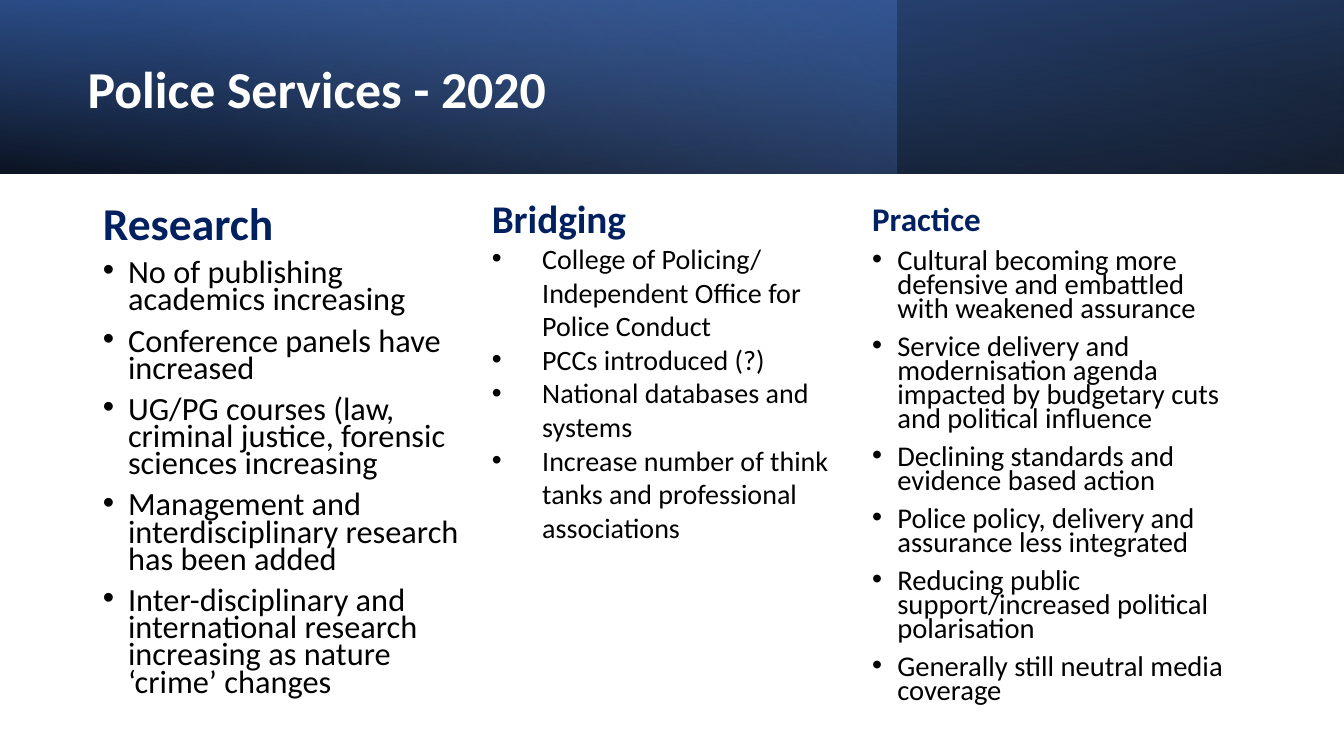
from lxml import etree
from pptx import Presentation
from pptx import util as u
from pptx.dml.color import RGBColor
from pptx.enum import shapes, text
from pptx.oxml import ns

WHITE, BLACK, NAVY = "FFFFFF", "000000", "002060"
FONT = "Calibri"
TITLE = "Police Services - 2020"

# width, rotation, mirrored, gradient angle, stops (percent, colour, opacity)
BANNER = [
    (13.33, 180, True, 100, [(0, BLACK, 96), (100, "2F5597", 100)]),
    (8.89, 0, False, 140, [(0, "4472C4", 41), (74, "8FAADC", 0)]),
    (13.33, 0, True, 260, [(0, BLACK, 63), (78, "4472C4", 15)]),
]
BAND = 1.72

RESEARCH = ("Research", [
    "No of publishing academics increasing",
    "Conference panels have increased",
    "UG/PG courses (law, criminal justice, forensic sciences increasing",
    "Management and interdisciplinary research has been added",
    "Inter-disciplinary and international research increasing as nature ‘crime’ changes",
])
BRIDGING = ("Bridging", [
    "College of Policing/ Independent Office for Police Conduct",
    "PCCs introduced (?)",
    "National databases and systems",
    "Increase number of think tanks and professional associations",
])
PRACTICE = ("Practice", [
    "Cultural becoming more defensive and embattled with weakened assurance",
    "Service delivery and modernisation agenda impacted by budgetary cuts and political influence",
    "Declining standards and evidence based action",
    "Police policy, delivery and assurance less integrated",
    "Reducing public support/increased political polarisation",
    "Generally still neutral media coverage",
])


def rgb(code):
    return RGBColor.from_string(code)


def place(shape, *box):
    shape.left, shape.top, shape.width, shape.height = map(u.Inches, box)


def add(parent, tag, **attrs):
    node = etree.SubElement(parent, ns.qn(tag))
    for key, val in attrs.items():
        node.set(key, str(val))
    return node


def shade(shape, angle, stops):
    """Fill with a linear gradient whose stops have their own opacity."""
    shape.fill.background()
    props = shape.element.spPr
    blank = props.find(ns.qn("a:noFill"))
    grad = add(props, "a:gradFill", rotWithShape=1)
    props.replace(blank, grad)
    steps = add(grad, "a:gsLst")
    for pos, code, alpha in stops:
        stop = add(steps, "a:gs", pos=pos * 1000)
        color = add(stop, "a:srgbClr", val=code)
        add(color, "a:alpha", val=alpha * 1000)
    add(grad, "a:lin", ang=angle * 60000, scaled=0)


def style(para, size, code, bold):
    font = para.font
    font.name, font.size, font.bold = FONT, u.Pt(size), bold
    font.color.rgb = rgb(code)
    para.alignment = text.PP_ALIGN.LEFT


def write(shape, column, sizes, indent, line, before):
    """Write a heading and its bulleted points."""
    head, points = column
    frame = shape.text_frame
    frame.word_wrap = True
    frame.auto_size = text.MSO_AUTO_SIZE.NONE
    for i, words in enumerate([head, *points]):
        para = frame.add_paragraph() if i else frame.paragraphs[0]
        para.text = words
        para.line_spacing, para.space_before = line, u.Pt(before)
        style(para, sizes[i > 0], BLACK if i else NAVY, i == 0)
        hang = u.Inches(indent) if i else 0
        props = para._p.get_or_add_pPr()
        props.set("marL", str(hang))
        props.set("indent", str(-hang))
        if i:
            add(props, "a:buFont", typeface="Arial")
            add(props, "a:buChar", char="•")
        else:
            add(props, "a:buNone")


def main():
    deck = Presentation()
    deck.slide_width, deck.slide_height = u.Inches(13.33), u.Inches(7.5)
    slide = deck.slides.add_slide(deck.slide_layouts[3])
    title, left, right = slide.placeholders

    for i, (width, turn, mirror, angle, stops) in enumerate(BANNER):
        band = slide.shapes.add_shape(shapes.MSO_SHAPE.RECTANGLE, 0, 0,
                                      u.Inches(width), u.Inches(BAND))
        band.shadow.inherit = False
        band.line.fill.background()
        band.rotation = turn
        if mirror:
            band.element.spPr.xfrm.set("flipH", "1")
        shade(band, angle, stops)
        title.element.addprevious(band.element)

    place(title, 0.77, 0.27, 7.72, 1.27)
    title.text_frame.text = TITLE
    title.text_frame.auto_size = text.MSO_AUTO_SIZE.NONE
    title.text_frame.vertical_anchor = text.MSO_ANCHOR.MIDDLE
    heading = title.text_frame.paragraphs[0]
    heading.line_spacing = 0.9
    style(heading, 37, WHITE, True)

    place(left, 0.92, 2.03, 3.86, 5.4)
    write(left, RESEARCH, (32.5, 23.1), 0.25, 0.7, 10)
    place(right, 8.55, 2.03, 3.86, 5.4)
    write(right, PRACTICE, (23.6, 20.4), 0.25, 0.7, 10)
    middle = slide.shapes.add_textbox(0, 0, 0, 0)
    place(middle, 4.78, 1.88, 3.77, 4.07)
    write(middle, BRIDGING, (28, 20), 0.5, 1.0, 0)

    deck.save("out.pptx")


if __name__ == "__main__":
    main()
